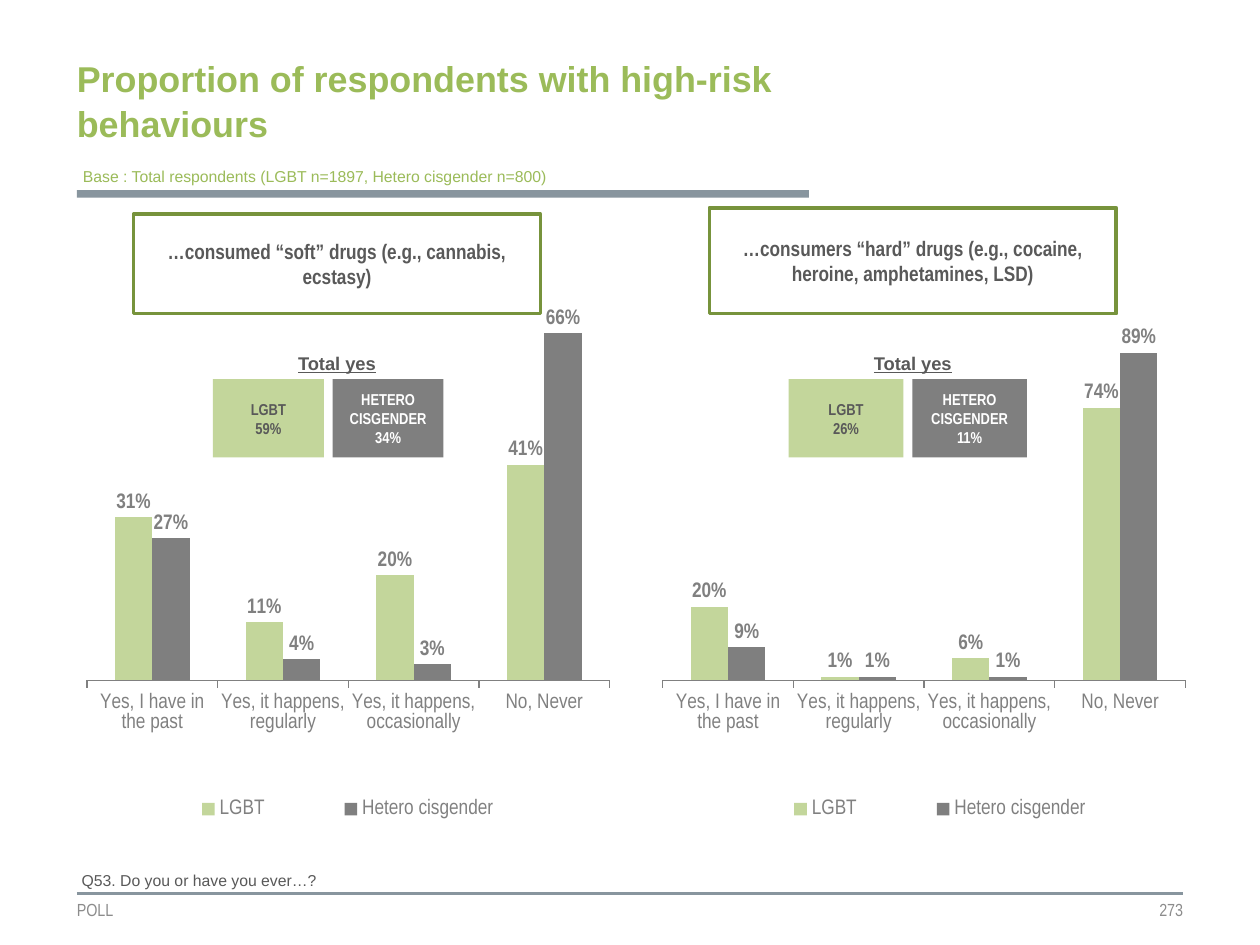
from dataclasses import dataclass

from lxml import etree
from pptx import Presentation
from pptx.chart.data import CategoryChartData
from pptx.dml.color import RGBColor
from pptx.enum.chart import XL_CHART_TYPE as CT, XL_LABEL_POSITION as LABEL
from pptx.enum.chart import XL_LEGEND_POSITION as LEGEND, XL_TICK_MARK as TICK
from pptx.enum.shapes import MSO_CONNECTOR, MSO_SHAPE
from pptx.enum.text import MSO_ANCHOR as ANCHOR, PP_ALIGN as ALIGN
from pptx.oxml import parse_xml
from pptx.oxml.ns import nsdecls, qn
from pptx.util import Inches, Pt


@dataclass(frozen=True)
class Theme:
    title: str = "9BBB59"
    rule: str = "88959E"
    frame: str = "77933C"
    lgbt: str = "C3D69B"
    hetero: str = "7F7F7F"
    axis: str = "808080"
    text: str = "595959"
    footer: str = "8C8C8C"
    white: str = "FFFFFF"
    sans: str = "Arial"
    narrow: str = "Arial Narrow"
    title_size: float = 20.5
    body_size: float = 12
    heading_size: float = 10.5
    footer_size: float = 10
    small_size: float = 9


T = Theme()


def write(sp, text, size, color, font=T.sans, bold=False, underline=False,
          align=ALIGN.LEFT, anchor=ANCHOR.MIDDLE, inset=None, spacing=None, wrap=True):
    tf = sp.text_frame
    tf.word_wrap = wrap
    tf.vertical_anchor = anchor
    if inset is not None:
        tf.margin_left = tf.margin_right = tf.margin_top = tf.margin_bottom = Inches(inset)
    for i, line in enumerate(text.split("\n")):
        p = tf.paragraphs[0] if i == 0 else tf.add_paragraph()
        p.alignment = align
        if spacing:
            p.line_spacing = spacing
        r = p.add_run()
        r.text = line
        r.font.name, r.font.size = font, Pt(size)
        r.font.bold, r.font.underline = bold, underline
        r.font.color.rgb = RGBColor.from_string(color)


def set_layout(parent, x, y, w, h, inner=False):
    """Place a plot area or legend by fractions of its chart."""
    target = '<c:layoutTarget val="inner"/>' if inner else ""
    sizes = "".join(f'<c:{k} val="{v}"/>' for k, v in zip("xywh", (x, y, w, h)))
    layout = parse_xml(
        f'<c:layout {nsdecls("c")}><c:manualLayout>{target}<c:xMode val="edge"/>'
        f'<c:yMode val="edge"/>{sizes}</c:manualLayout></c:layout>')
    old = parent.find(qn("c:layout"))
    if old is not None:
        parent.remove(old)
    parent.insert(0 if inner else 1, layout)


prs = Presentation()
prs.slide_width, prs.slide_height = Inches(10), Inches(7.5)
s = prs.slides.add_slide(prs.slide_layouts[5])
shapes = s.shapes

# Title, base and rules
title = shapes.title
title.left, title.top = Inches(0.61), Inches(0.28)
title.width, title.height = Inches(5.81), Inches(1.02)
write(title, "Proportion of respondents with high-risk behaviours", T.title_size, T.title,
      bold=True, inset=0, spacing=1.05)

bar = shapes.add_shape(MSO_SHAPE.RECTANGLE, Inches(0.61), Inches(1.51), Inches(5.81), Inches(0.06))
bar.shadow.inherit = False
bar.fill.solid()
bar.fill.fore_color.rgb = RGBColor.from_string(T.rule)
bar.line.fill.background()

rule = shapes.add_connector(MSO_CONNECTOR.STRAIGHT, Inches(0.61), Inches(7.09), Inches(9.39), Inches(7.09))
rule.line.color.rgb = RGBColor.from_string(T.rule)
rule.line.width = Pt(1.5)
etree.SubElement(rule._element.spPr, qn("a:effectLst"))

base = shapes.add_textbox(Inches(0.56), Inches(1.27), Inches(3.93), Inches(0.25))
write(base, "Base : Total respondents (LGBT n=1897, Hetero cisgender n=800)",
      T.small_size, T.title, anchor=ANCHOR.TOP, wrap=False)
question = shapes.add_textbox(Inches(0.55), Inches(6.86), Inches(8.55), Inches(0.25))
write(question, "Q53. Do you or have you ever…?", T.small_size, T.text, anchor=ANCHOR.TOP)

for text, left, width, align in (("POLL", 0.61, 2.8, ALIGN.LEFT), ("273", 6.55, 2.84, ALIGN.RIGHT)):
    footer = shapes.add_textbox(Inches(left), Inches(7.09), Inches(width), Inches(0.26))
    write(footer, text, T.footer_size, T.footer, T.narrow, align=align, inset=0)

# One panel per kind of drug
CATEGORIES = ["Yes, I have in the past", "Yes, it happens, regularly",
              "Yes, it happens, occasionally", "No, Never"]
PANELS = [
    dict(heading="…consumed “soft” drugs (e.g., cannabis, ecstasy)",
         chart_left=0.59, left=1.06, top=1.7, tiles=(1.69, 2.64), tile_width=0.88,
         lgbt=(0.31, 0.11, 0.2, 0.41), hetero=(0.27, 0.04, 0.03, 0.66),
         totals=("LGBT\n59%", "HETERO CISGENDER\n34%"), axis_max=0.7, legend_left=0.1),
    dict(heading="…consumers “hard” drugs (e.g., cocaine, heroine, amphetamines, LSD)",
         chart_left=5.16, left=5.63, top=1.65, tiles=(6.26, 7.24), tile_width=0.91,
         lgbt=(0.2, 0.01, 0.06, 0.74), hetero=(0.09, 0.01, 0.01, 0.89),
         totals=("LGBT\n26%", "HETERO CISGENDER 11%"), axis_max=1, legend_left=0.13),
]

for panel in PANELS:
    data = CategoryChartData(number_format="0%")
    data.categories = CATEGORIES
    data.add_series("LGBT", panel["lgbt"])
    data.add_series("Hetero cisgender", panel["hetero"])
    chart = shapes.add_chart(CT.COLUMN_CLUSTERED, Inches(panel["chart_left"]), Inches(2.33),
                             Inches(4.34), Inches(4.33), data).chart
    chart.has_title = False
    chart.font.name, chart.font.size = T.narrow, Pt(T.body_size)
    chart.font.color.rgb = RGBColor.from_string(T.axis)

    values = chart.value_axis
    values.visible = values.has_major_gridlines = False
    values.minimum_scale, values.maximum_scale = 0, panel["axis_max"]
    categories = chart.category_axis
    categories.major_tick_mark = TICK.OUTSIDE
    categories.format.line.color.rgb = RGBColor.from_string(T.axis)

    plot = chart.plots[0]
    plot.gap_width, plot.overlap, plot.vary_by_categories = 150, 0, False
    for series, color in zip(plot.series, (T.lgbt, T.hetero)):
        series.format.fill.solid()
        series.format.fill.fore_color.rgb = RGBColor.from_string(color)
        labels = series.data_labels
        labels.show_value, labels.position = True, LABEL.OUTSIDE_END
        labels.number_format, labels.number_format_is_linked = "0%", False
        labels.font.name, labels.font.size = T.narrow, Pt(T.body_size)
        labels.font.bold = True
        labels.font.color.rgb = RGBColor.from_string(T.axis)

    chart.has_legend = True
    chart.legend.position = LEGEND.BOTTOM
    chart.legend.include_in_layout = False
    set_layout(chart.legend._element, panel["legend_left"], 0.9, 0.8, 0.09)
    set_layout(chart._chartSpace.chart.plotArea, 0.023, 0.034, 0.956, 0.675, inner=True)

    box = shapes.add_shape(MSO_SHAPE.RECTANGLE, Inches(panel["left"]), Inches(panel["top"]),
                           Inches(3.23), Inches(2.49 - panel["top"]))
    box.shadow.inherit = False
    box.fill.background()
    box.line.color.rgb = RGBColor.from_string(T.frame)
    box.line.width = Pt(2)
    write(box, panel["heading"], T.body_size, T.text, T.narrow, bold=True, align=ALIGN.CENTER)

    tiles = zip(panel["tiles"], panel["totals"], (T.lgbt, T.hetero), (T.text, T.white))
    for left, text, fill, color in tiles:
        tile = shapes.add_shape(MSO_SHAPE.RECTANGLE, Inches(left), Inches(3.01),
                                Inches(panel["tile_width"]), Inches(0.62))
        tile.shadow.inherit = False
        tile.fill.solid()
        tile.fill.fore_color.rgb = RGBColor.from_string(fill)
        tile.line.fill.background()
        write(tile, text, T.small_size, color, T.narrow, bold=True, align=ALIGN.CENTER)

    total = shapes.add_textbox(Inches(panel["left"]), Inches(2.73), Inches(3.23), Inches(0.31))
    write(total, "Total yes", T.heading_size, T.text, bold=True, underline=True, align=ALIGN.CENTER)

prs.save("out.pptx")
